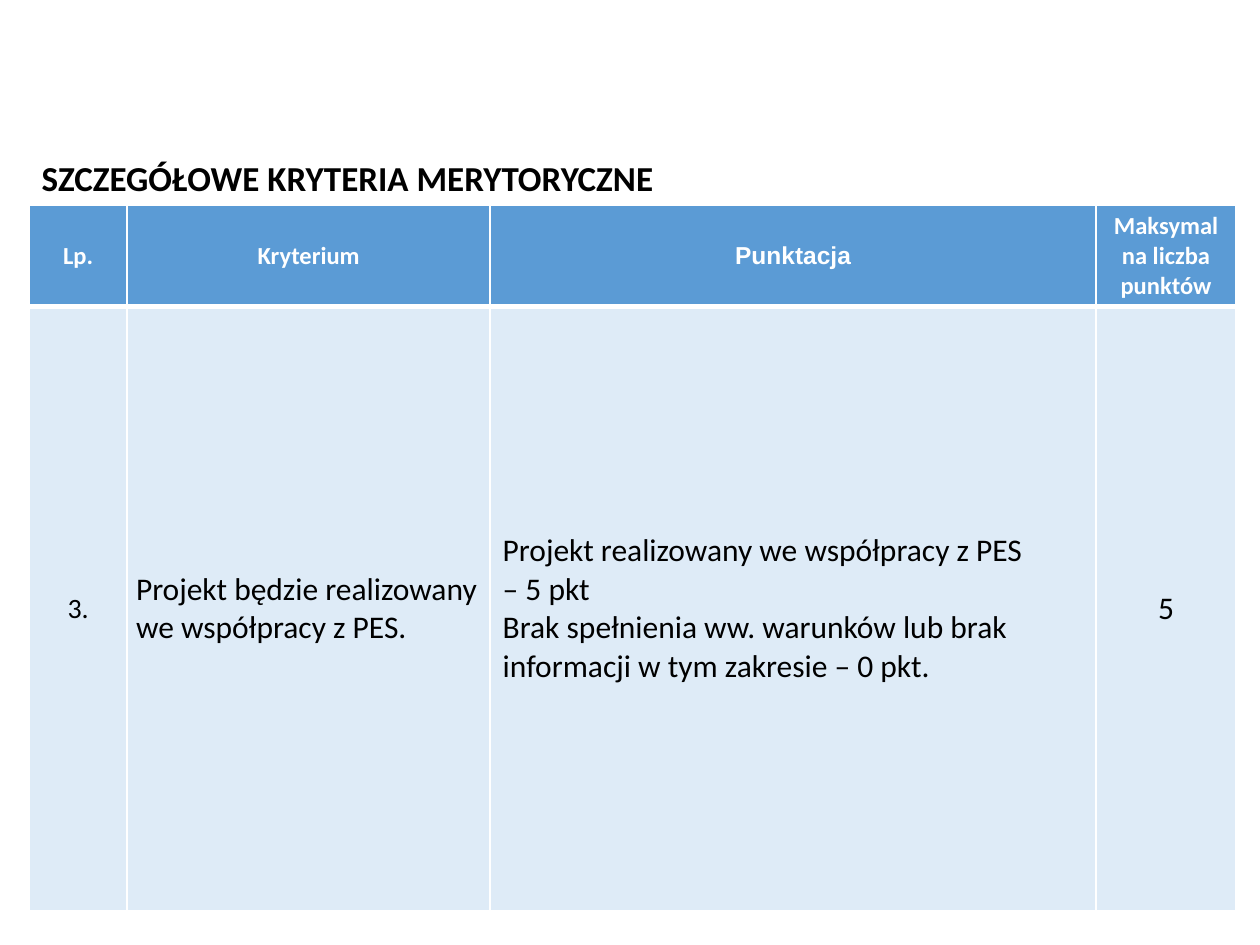
"""Build the slide with the table of detailed merit criteria."""
from dataclasses import dataclass

from lxml import etree
from pptx import Presentation
from pptx import util as u
from pptx.dml.color import RGBColor
from pptx.enum import text
from pptx.oxml.ns import qn

WHITE = RGBColor(0xFF, 0xFF, 0xFF)
BLACK = RGBColor(0x00, 0x00, 0x00)
HEADER_BLUE = RGBColor(0x5B, 0x9B, 0xD5)
BODY_BLUE = RGBColor(0xDE, 0xEB, 0xF7)

SLIDE_WIDTH, SLIDE_HEIGHT = u.Inches(10), u.Inches(7.5)
LEFT_MARGIN = 0.023
COLUMN_WIDTHS = (0.078, 0.288, 0.481, 0.111)
ROW_HEIGHTS = (0.76, 4.8)
CENTER, LEFT = text.PP_ALIGN.CENTER, text.PP_ALIGN.LEFT


@dataclass(frozen=True)
class Entry:
    wording: str
    size: int = 14
    align: text.PP_ALIGN = CENTER
    typeface: str = "Calibri"
    tight: bool = False


@dataclass(frozen=True)
class RowStyle:
    fill: RGBColor
    ink: RGBColor
    bold: bool
    bottom_line: int


HEADER = RowStyle(HEADER_BLUE, WHITE, True, 3)
BODY = RowStyle(BODY_BLUE, BLACK, False, 1)

CRITERIA = (
    (HEADER, (
        Entry("Lp."),
        Entry("Kryterium"),
        Entry("Punktacja", typeface="Arial"),
        Entry("Maksymalna liczba punktów"),
    )),
    (BODY, (
        Entry("3.", 16),
        Entry("Projekt będzie realizowany we współpracy z PES.", 18, LEFT, tight=True),
        Entry("Projekt realizowany we współpracy z PES\n– 5 pkt\n"
              "Brak spełnienia ww. warunków lub brak informacji w tym zakresie – 0 pkt.",
              18, LEFT),
        Entry("5", 18),
    )),
)


def share_x(share: float) -> u.Emu:
    """Return a share of the slide's width."""
    return u.Emu(round(SLIDE_WIDTH * share))


def set_borders(cell, bottom_line: int) -> None:
    """Draw white borders around a cell."""
    properties = cell._tc.get_or_add_tcPr()
    for side, points in zip("LRTB", (1, 1, 1, bottom_line)):
        line = etree.SubElement(properties, qn(f"a:ln{side}"), w=str(u.Pt(points)))
        solid = etree.SubElement(line, qn("a:solidFill"))
        etree.SubElement(solid, qn("a:srgbClr"), val=str(WHITE))


def set_font(paragraph, typeface: str, size: int, ink: RGBColor, bold: bool) -> None:
    """Format the font of a whole paragraph."""
    font = paragraph.font
    font.name, font.size, font.bold = typeface, u.Pt(size), bold
    font.color.rgb = ink


def fill_cell(cell, entry: Entry, style: RowStyle) -> None:
    """Write one entry into a cell in the style of its row."""
    set_borders(cell, style.bottom_line)
    cell.fill.solid()
    cell.fill.fore_color.rgb = style.fill
    cell.vertical_anchor = text.MSO_ANCHOR.MIDDLE
    if entry.tight:
        cell.margin_left = cell.margin_right = u.Inches(0.07)
        cell.margin_top = cell.margin_bottom = 0
    cell.text_frame.text = entry.wording
    for paragraph in cell.text_frame.paragraphs:
        paragraph.alignment = entry.align
        set_font(paragraph, entry.typeface, entry.size, style.ink, style.bold)


def add_heading(slide, wording: str) -> None:
    """Place the slide's title above the table."""
    heading = slide.shapes.title
    heading.left, heading.top = share_x(LEFT_MARGIN), u.Inches(1.19)
    heading.width, heading.height = share_x(0.935), u.Inches(0.44)
    frame = heading.text_frame
    frame.text = wording
    frame.word_wrap = True
    frame.auto_size = text.MSO_AUTO_SIZE.SHAPE_TO_FIT_TEXT
    frame.vertical_anchor = text.MSO_ANCHOR.MIDDLE
    frame.paragraphs[0].alignment = LEFT
    set_font(frame.paragraphs[0], "Calibri", 20, BLACK, True)


def add_criteria(slide) -> None:
    """Add the table of criteria."""
    table = slide.shapes.add_table(
        len(ROW_HEIGHTS), len(COLUMN_WIDTHS), share_x(LEFT_MARGIN), u.Inches(1.63),
        share_x(sum(COLUMN_WIDTHS)), u.Inches(sum(ROW_HEIGHTS))).table
    for column, width in zip(table.columns, COLUMN_WIDTHS):
        column.width = share_x(width)
    for row, height, (style, entries) in zip(table.rows, ROW_HEIGHTS, CRITERIA):
        row.height = u.Inches(height)
        for cell, entry in zip(row.cells, entries):
            fill_cell(cell, entry, style)


def main() -> None:
    """Build and save the presentation."""
    deck = Presentation()
    deck.slide_width, deck.slide_height = SLIDE_WIDTH, SLIDE_HEIGHT
    slide = deck.slides.add_slide(deck.slide_layouts.get_by_name("Title Only"))
    add_criteria(slide)
    add_heading(slide, "SZCZEGÓŁOWE KRYTERIA MERYTORYCZNE")
    deck.save("out.pptx")


if __name__ == "__main__":
    main()
